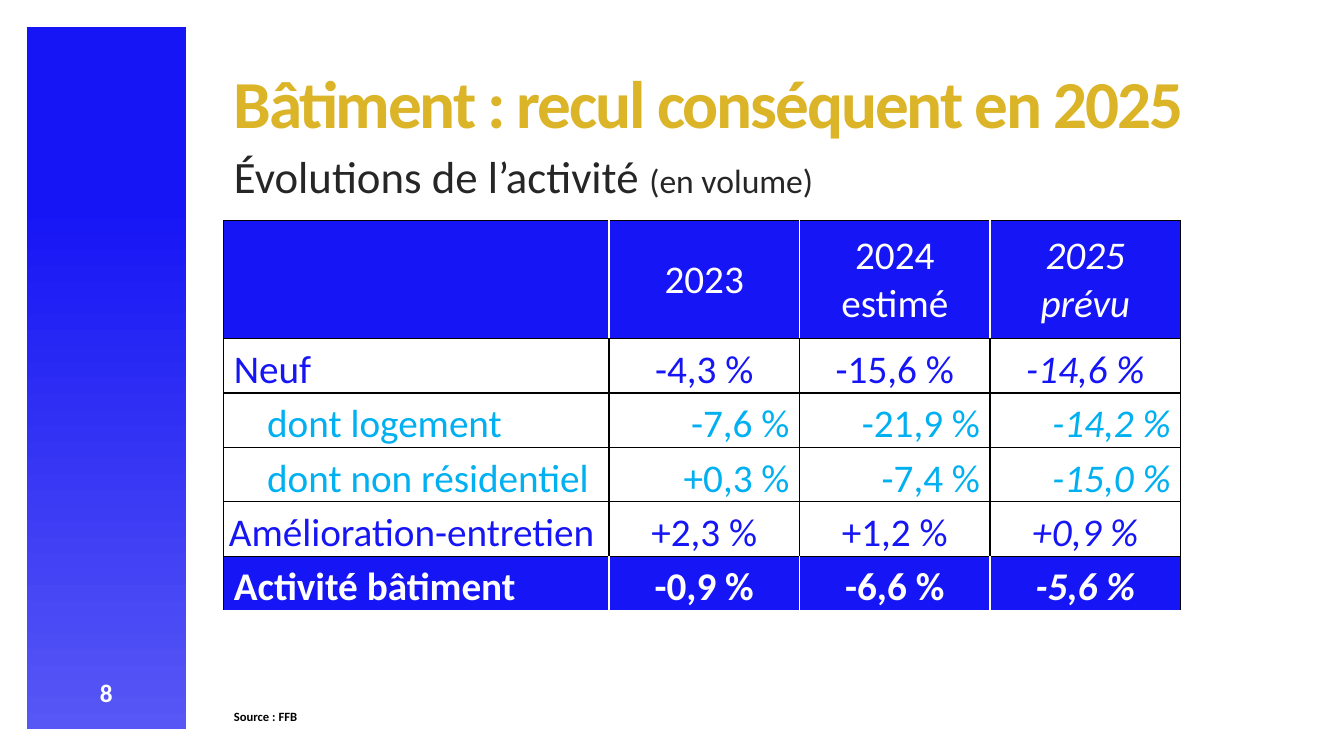
"""Build the slide on construction activity: side band, headings and table."""
from dataclasses import dataclass

from lxml import etree
from pptx import Presentation
from pptx import util as u
from pptx.dml.color import RGBColor
from pptx.enum import shapes, text
from pptx.oxml import ns

BLUE = RGBColor(0x16, 0x15, 0xF5)
PALE = RGBColor(0x57, 0x57, 0xF5)
SKY = RGBColor(0x00, 0xB0, 0xF0)
GOLD = RGBColor(0xDB, 0xB4, 0x28)
GREY = RGBColor(0x26, 0x26, 0x26)
BLACK = RGBColor(0, 0, 0)
WHITE = RGBColor(0xFF, 0xFF, 0xFF)
LEFT, CENTER, RIGHT = text.PP_ALIGN.LEFT, text.PP_ALIGN.CENTER, text.PP_ALIGN.RIGHT
FACE = "Calibri"


@dataclass
class Head:
    """A heading held by a placeholder."""
    slot: int
    words: str
    top: float
    wide: float
    high: float
    size: int
    color: RGBColor
    bold: bool


@dataclass
class Row:
    """A table row with its look."""
    cells: tuple[str, ...]
    ink: RGBColor = BLUE
    fill: RGBColor = WHITE
    align: text.PP_ALIGN = CENTER
    bold: bool = False
    indent: float = 0
    inset: float = 0.1
    high: float = 0.54
    lead: float = 0.5
    anchor: text.MSO_ANCHOR = text.MSO_ANCHOR.BOTTOM


HEADS = [
    Head(0, "Bâtiment : recul conséquent en 2025", 0.65, 10.66, 0.83, 48, GOLD, True),
    Head(1, "Évolutions de l’activité ", 1.49, 10.66, 0.5, 32, GREY, False),
    Head(3, "Source : FFB", 7, 8.98, 0.24, 9, BLACK, True),
]
ROWS = [
    Row(("", "2023", "2024 estimé", "2025 prévu"), WHITE, BLUE, high=1.17, lead=1,
        anchor=text.MSO_ANCHOR.MIDDLE),
    Row(("Neuf", "-4,3 %", "-15,6 %", "-14,6 %")),
    Row(("dont logement", "-7,6 %", "-21,9 %", "-14,2 %"), SKY, align=RIGHT, indent=0.33),
    Row(("dont non résidentiel", "+0,3 %", "-7,4 %", "-15,0 %"), SKY, align=RIGHT, indent=0.33),
    Row(("Amélioration-entretien", "+2,3 %", "+1,2 %", "+0,9 %"), inset=0.05),
    Row(("Activité bâtiment", "-0,9 %", "-6,6 %", "-5,6 %"), WHITE, BLUE, bold=True),
]
COLS = (3.82, 1.89, 1.89, 1.89)


def style(para, size: int, color: RGBColor, bold: bool = False, slant: bool = False) -> None:
    """Set the font of a paragraph."""
    font = para.font
    font.name, font.size, font.bold, font.italic = FACE, u.Pt(size), bold, slant
    font.color.rgb = color


def draw_band(slide) -> None:
    """Draw the side band and the page number."""
    band = slide.shapes.add_shape(shapes.MSO_SHAPE.RECTANGLE, u.Inches(0.27), u.Inches(0.27),
                                  u.Inches(1.58), u.Inches(6.96))
    band.shadow.inherit = False
    band.line.fill.background()
    band.fill.gradient()
    band.fill.gradient_angle = 270
    for stop, place, color in zip(band.fill.gradient_stops, (0.25, 1), (BLUE, PALE)):
        stop.position, stop.color.rgb = place, color
    page = slide.shapes.add_textbox(u.Inches(0.27), u.Inches(6.67), u.Inches(1.57), u.Inches(0.4))
    page.text_frame.word_wrap = True
    para = page.text_frame.paragraphs[0]
    para.text, para.alignment = "8", CENTER
    style(para, 18, WHITE, True)


def draw_head(slide, head: Head) -> None:
    """Place and fill one heading."""
    shape = slide.placeholders[head.slot]
    shape.left, shape.top = u.Inches(2.22), u.Inches(head.top)
    shape.width, shape.height = u.Inches(head.wide), u.Inches(head.high)
    frame = shape.text_frame
    frame.auto_size = text.MSO_AUTO_SIZE.NONE
    frame.vertical_anchor = text.MSO_ANCHOR.TOP
    frame.word_wrap = True
    para = frame.paragraphs[0]
    para.text, para.alignment = head.words, LEFT
    para.line_spacing, para.space_before = 0.9, u.Pt(0)
    style(para, head.size, head.color, head.bold)


def draw_edges(cell, colors: tuple[RGBColor, ...]) -> None:
    """Line a cell on its left, right, top and bottom."""
    props = cell._tc.get_or_add_tcPr()
    for spot, (side, color) in enumerate(zip("LRTB", colors)):
        line = etree.Element(ns.qn(f"a:ln{side}"), w=str(u.Pt(1)))
        fill = etree.SubElement(line, ns.qn("a:solidFill"))
        etree.SubElement(fill, ns.qn("a:srgbClr"), val=str(color))
        props.insert(spot, line)


def draw_cell(cell, row: Row, col: int, last: bool) -> None:
    """Fill, line and write one cell."""
    cell.fill.solid()
    cell.fill.fore_color.rgb = row.fill
    inner = WHITE if row.fill == BLUE else BLACK
    draw_edges(cell, (inner if col else BLACK, inner if col < len(COLS) - 1 else BLACK,
                      BLACK, WHITE if last else BLACK))
    cell.vertical_anchor = row.anchor
    if col == 0:
        cell.margin_left = u.Inches(row.inset + row.indent)
        cell.margin_right = u.Inches(row.inset)
    para = cell.text_frame.paragraphs[0]
    para.text = row.cells[col]
    para.alignment = row.align if col else LEFT
    para.line_spacing = row.lead
    style(para, 28, row.ink, row.bold, col == len(COLS) - 1)


def draw_table(slide) -> None:
    """Draw the table of yearly changes."""
    high = sum(row.high for row in ROWS)
    grid = slide.shapes.add_table(len(ROWS), len(COLS), u.Inches(2.22), u.Inches(2.19),
                                  u.Inches(sum(COLS)), u.Inches(high)).table
    grid.first_row = grid.horz_banding = False
    for col, wide in enumerate(COLS):
        grid.columns[col].width = u.Inches(wide)
    for spot, row in enumerate(ROWS):
        grid.rows[spot].height = u.Inches(row.high)
        for col in range(len(COLS)):
            draw_cell(grid.cell(spot, col), row, col, spot == len(ROWS) - 1)


def main() -> None:
    """Build and save the deck."""
    deck = Presentation()
    deck.slide_width, deck.slide_height = u.Inches(13.33), u.Inches(7.5)
    slide = deck.slides.add_slide(deck.slide_layouts[4])
    for slot in (2, 4):
        spare = slide.placeholders[slot].element
        spare.getparent().remove(spare)
    draw_band(slide)
    for head in HEADS:
        draw_head(slide, head)
    title = slide.shapes.title.text_frame.paragraphs[0].runs[0]
    title._r.get_or_add_rPr().set("spc", "-150")
    note = slide.placeholders[1].text_frame.paragraphs[0].add_run()
    note.text, note.font.size = "(en volume)", u.Pt(24)
    draw_table(slide)
    deck.save("out.pptx")


if __name__ == "__main__":
    main()
